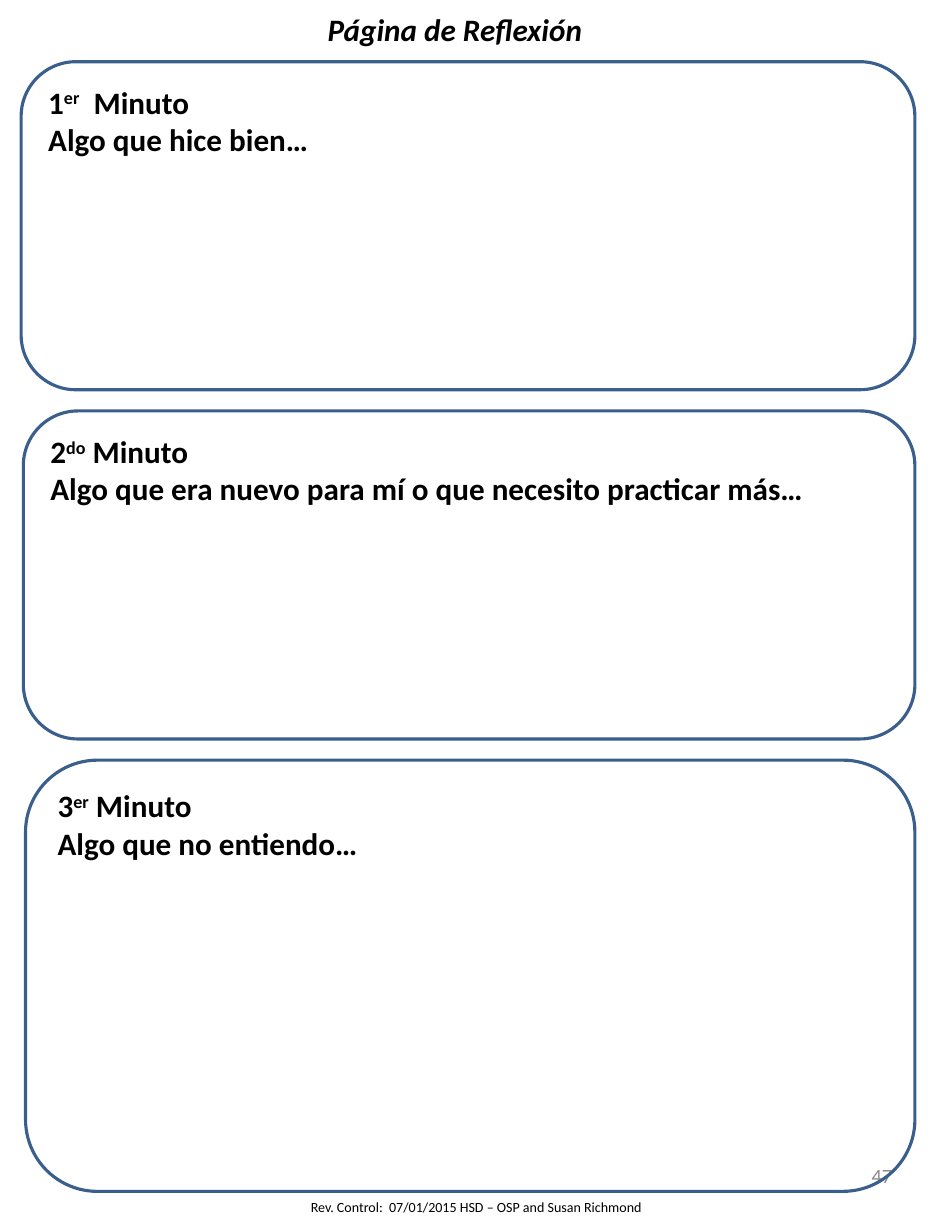
from dataclasses import dataclass

from pptx import Presentation
from pptx.dml.color import RGBColor
from pptx.enum.shapes import MSO_SHAPE
from pptx.enum.text import MSO_ANCHOR, PP_ALIGN
from pptx.util import Cm, Pt


@dataclass(frozen=True)
class Theme:
    """Colours, font and type sizes of the page."""
    font: str = "Calibri"
    ink: RGBColor = RGBColor(0x00, 0x00, 0x00)
    grey: RGBColor = RGBColor(0x8C, 0x8C, 0x8C)
    border: RGBColor = RGBColor(0x3A, 0x5F, 0x8C)
    border_width: Pt = Pt(2)
    heading: Pt = Pt(20)
    number: Pt = Pt(13)
    footer: Pt = Pt(9)


THEME = Theme()
PROMPTS = [
    ("1", "er", "  Minuto", "Algo que hice bien…", 7.44),
    ("2", "do", " Minuto", "Algo que era nuevo para mí o que necesito practicar más…", 7.44),
    ("3", "er", " Minuto", "Algo que no entiendo…", 9.78),
]


def add_run(p, text, size, color=THEME.ink, **formats):
    """Append a formatted run to a paragraph and return it."""
    r = p.add_run()
    r.text = text
    r.font.color.rgb = color
    for name, value in {"name": THEME.font, "size": size, **formats}.items():
        setattr(r.font, name, value)
    return r


def add_label(s, box, text, size, align, color=THEME.ink, inset=0.13,
              anchor=MSO_ANCHOR.TOP, **formats):
    """Place one line of text in a box."""
    tf = s.shapes.add_textbox(*map(Cm, box)).text_frame
    settings = {
        "word_wrap": True, "vertical_anchor": anchor,
        "margin_left": Cm(0.27), "margin_right": Cm(0.27),
        "margin_top": Cm(inset), "margin_bottom": Cm(inset),
    }
    for name, value in settings.items():
        setattr(tf, name, value)
    p = tf.paragraphs[0]
    p.alignment = align
    add_run(p, text, size, color, **formats)


def add_prompt(s, box, number, ordinal, unit, prompt):
    """Draw a rounded answer panel with its minute and prompt."""
    sp = s.shapes.add_shape(MSO_SHAPE.ROUNDED_RECTANGLE, *map(Cm, box))
    sp.shadow.inherit = False
    sp.fill.background()
    sp.line.color.rgb = THEME.border
    sp.line.width = THEME.border_width
    tf = sp.text_frame
    tf.word_wrap = True
    tf.vertical_anchor = MSO_ANCHOR.TOP
    p = tf.paragraphs[0]
    p.alignment = PP_ALIGN.LEFT
    for text in (number, ordinal, unit):
        r = add_run(p, text, THEME.heading, bold=True)
        if text == ordinal:
            r.font._element.set("baseline", "30000")
    p = tf.add_paragraph()
    p.alignment = PP_ALIGN.LEFT
    add_run(p, prompt, THEME.heading, bold=True)


def add_prompts(s, box, gap=0.48, indent=0.05):
    """Stack the panels from the top of a box, sharing its right edge."""
    left, top, width = box
    for i, (*words, height) in enumerate(PROMPTS):
        shift = i * indent
        add_prompt(s, (left + shift, top, width - shift, height), *words)
        top += height + gap


def build():
    """Build and save the reflection page."""
    prs = Presentation()
    prs.slide_width, prs.slide_height = Cm(21.59), Cm(27.94)
    s = prs.slides.add_slide(prs.slide_layouts[6])
    add_label(s, (6.78, 27.05, 10.8, 0.66),
              "Rev. Control:  07/01/2015 HSD – OSP and Susan Richmond",
              THEME.footer, PP_ALIGN.LEFT)
    add_label(s, (15.47, 25.91, 5.03, 1.5), "47", THEME.number, PP_ALIGN.RIGHT,
              THEME.grey, inset=0.15, anchor=MSO_ANCHOR.MIDDLE)
    add_prompts(s, (0.48, 1.4, 20.27))
    add_label(s, (2.16, 0.1, 16.31, 1.12), "Página de Reflexión",
              THEME.heading, PP_ALIGN.CENTER, bold=True, italic=True)
    prs.save("out.pptx")


if __name__ == "__main__":
    build()
